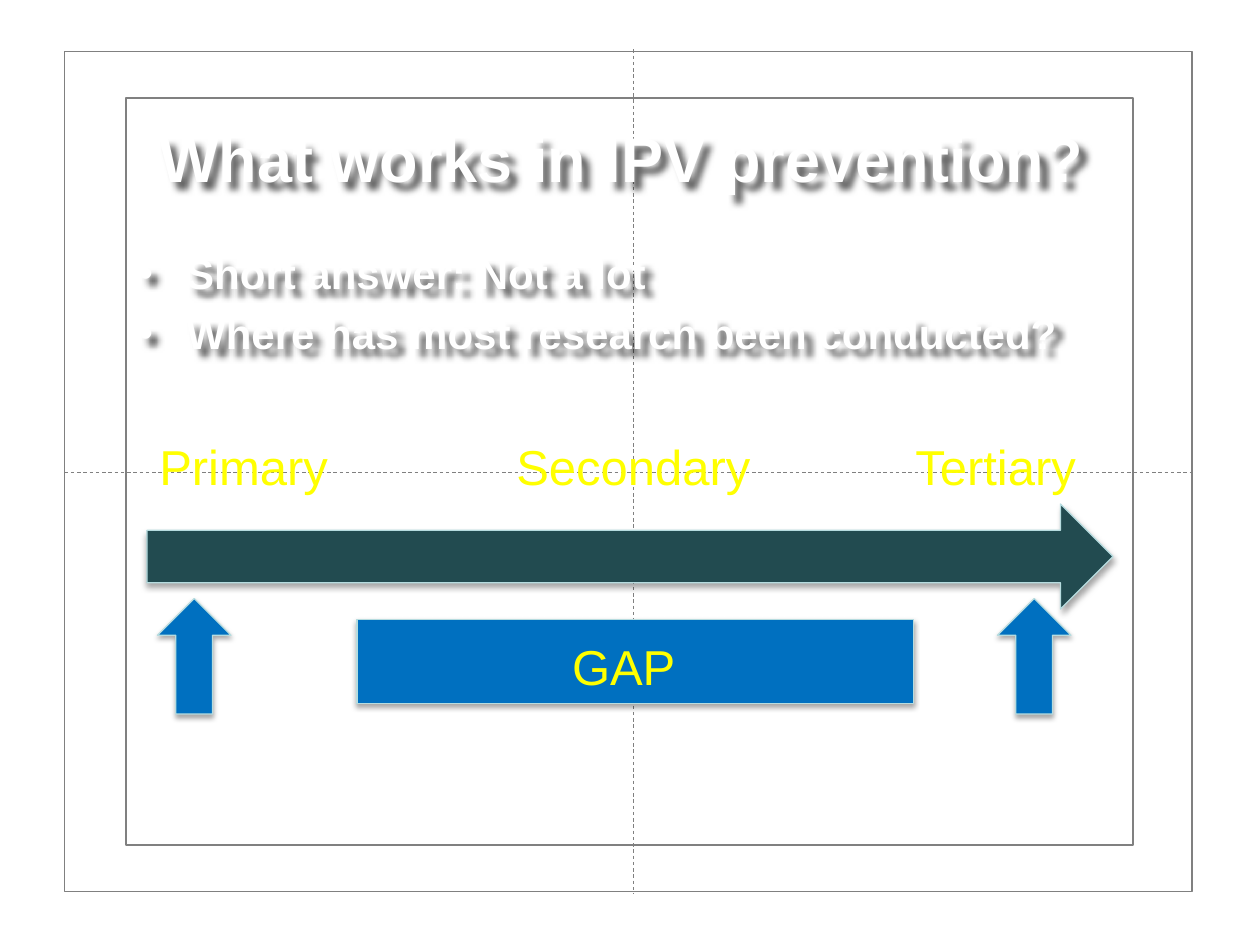
from lxml import etree
from pptx import Presentation
from pptx.dml.color import RGBColor
from pptx.enum.dml import MSO_LINE
from pptx.enum.shapes import MSO_CONNECTOR, MSO_SHAPE
from pptx.enum.text import MSO_ANCHOR, MSO_AUTO_SIZE, PP_ALIGN
from pptx.oxml.ns import qn
from pptx.util import Inches, Pt

RECTANGLE, RIGHT_ARROW = MSO_SHAPE.RECTANGLE, MSO_SHAPE.RIGHT_ARROW
STRAIGHT, DASH = MSO_CONNECTOR.STRAIGHT, MSO_LINE.DASH
LEFT, CENTER, MIDDLE = PP_ALIGN.LEFT, PP_ALIGN.CENTER, MSO_ANCHOR.MIDDLE
NO_FIT, GROW = MSO_AUTO_SIZE.NONE, MSO_AUTO_SIZE.SHAPE_TO_FIT_TEXT

COLORS = {
    "guide": "808080", "heading": "FFFFFF", "label": "FFFF00",
    "continuum": "224B50", "marker": "0070C0", "edge": "B6DCDF",
    "shadow": "000000",
}
FONTS = {
    "title": {"name": "Arial", "size": Pt(36), "bold": True},
    "body": {"name": "Arial", "size": Pt(24), "bold": True},
    "label": {"name": "Arial", "size": Pt(28), "bold": False},
}
BOX_SHADOW = {"blur": 3.1, "distance": 1.8, "angle": 90, "opacity": 35}
TEXT_SHADOW = {"blur": 4, "distance": 5, "angle": 45, "opacity": 60}
COLUMNS, ROWS = 120, 90
CELL = Inches(10) / COLUMNS


def grid(*cells):
    return [round(cell * CELL) for cell in cells]


def color(key):
    return RGBColor.from_string(COLORS[key])


def format_font(font, style, color_key):
    for attribute, value in FONTS[style].items():
        setattr(font, attribute, value)
    font.color.rgb = color(color_key)


def format_line(line, color_key, width):
    line.color.rgb = color(color_key)
    line.width = Pt(width)


def add_shadow(shape, blur, distance, angle, opacity):
    shape.shadow.inherit = False
    effects = shape._element.spPr.find(qn("a:effectLst"))
    outer = etree.SubElement(
        effects, qn("a:outerShdw"), blurRad=str(Pt(blur)),
        dist=str(Pt(distance)), dir=str(angle * 60000), rotWithShape="0")
    tint = etree.SubElement(outer, qn("a:srgbClr"), val=COLORS["shadow"])
    etree.SubElement(tint, qn("a:alpha"), val=str(opacity * 1000))


def add_frame(slide, cells):
    frame = slide.shapes.add_shape(RECTANGLE, *grid(*cells))
    frame.shadow.inherit = False
    frame.fill.background()
    format_line(frame.line, "guide", 1)


def add_guide(slide, ends):
    guide = slide.shapes.add_connector(STRAIGHT, *grid(*ends))
    format_line(guide.line, "guide", 0.5)
    guide.line.dash_style = DASH
    etree.SubElement(guide._element.spPr, qn("a:effectLst"))


def place_title(slide, text, cells):
    title = slide.shapes.title
    slide.shapes._spTree.append(title._element)
    title.left, title.top, title.width, title.height = grid(*cells)
    frame = title.text_frame
    frame.text = text
    frame.auto_size, frame.vertical_anchor = NO_FIT, MIDDLE
    heading = frame.paragraphs[0]
    heading.alignment = LEFT
    format_font(heading.runs[0].font, "title", "heading")
    add_shadow(title, **TEXT_SHADOW)


def add_bullets(slide, points, cells):
    body = slide.shapes.add_textbox(*grid(*cells))
    frame = body.text_frame
    frame.word_wrap = True
    for index, point in enumerate(points):
        item = frame.paragraphs[0] if index == 0 else frame.add_paragraph()
        if index:
            item.space_before = Pt(5.5)
        properties = item._p.get_or_add_pPr()
        properties.set("marL", str(Inches(0.38)))
        properties.set("indent", str(-Inches(0.38)))
        etree.SubElement(properties, qn("a:buFont"), typeface="Arial")
        etree.SubElement(properties, qn("a:buChar"), char="•")
        run = item.add_run()
        run.text = point
        format_font(run.font, "body", "heading")
    add_shadow(body, **TEXT_SHADOW)


def add_block(slide, preset, fill_key, cells, rotation=0):
    block = slide.shapes.add_shape(preset, *grid(*cells))
    block.rotation = rotation
    block.fill.solid()
    block.fill.fore_color.rgb = color(fill_key)
    format_line(block.line, "edge", 0.75)
    add_shadow(block, **BOX_SHADOW)


def add_label(slide, text, cells, alignment=LEFT):
    frame = slide.shapes.add_textbox(*grid(*cells)).text_frame
    frame.word_wrap, frame.auto_size = True, GROW
    frame.text = text
    label = frame.paragraphs[0]
    label.alignment = alignment
    format_font(label.runs[0].font, "label", "label")


def main():
    deck = Presentation()
    deck.slide_width, deck.slide_height = grid(COLUMNS, ROWS)
    slide = deck.slides.add_slide(deck.slide_layouts[5])

    for cells in [(6.15, 4.9, 107.4, 80), (12, 9.3, 95.9, 71.2)]:
        add_frame(slide, cells)
    for ends in [(6.15, 45, 113.55, 45), (60.35, 4.7, 60.35, 85.1)]:
        add_guide(slide, ends)

    place_title(slide, "What works in IPV prevention?", (14, 10, 99, 10))
    add_bullets(slide, ["Short answer: Not a lot",
                        "Where has most research been conducted?"],
                (12, 23, 102, 16))

    add_block(slide, RIGHT_ARROW, "continuum", (14, 48, 92, 10))
    for stage, column, width in [("Primary", 14, 19), ("Secondary", 48, 29),
                                 ("Tertiary", 86, 20)]:
        add_label(slide, stage, (column, 41, width, 6.85))
    for column in (13, 93):
        add_block(slide, RIGHT_ARROW, "marker", (column, 59, 11, 7), 270)
    add_block(slide, RECTANGLE, "marker", (34, 59, 53, 8))
    add_label(slide, "GAP ", (49, 60, 22, 6.85), CENTER)

    deck.save("out.pptx")


if __name__ == "__main__":
    main()
